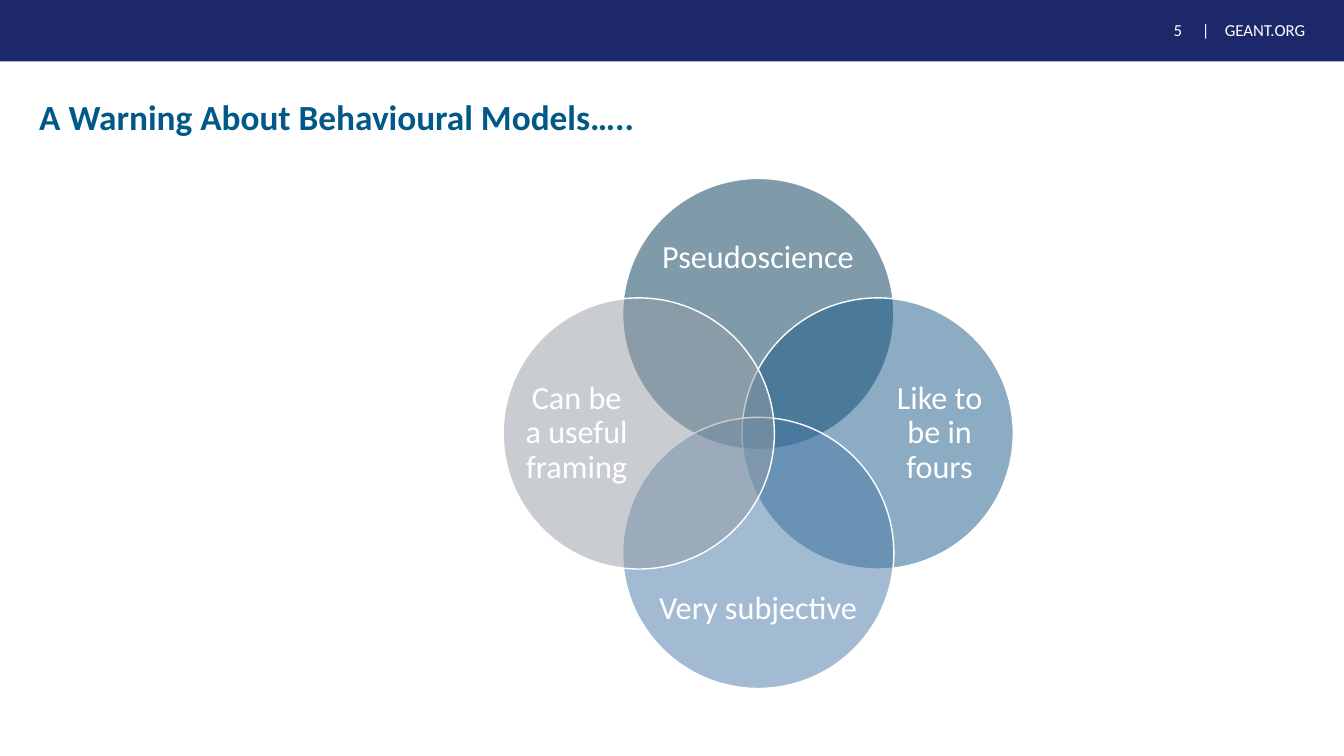
from lxml.etree import SubElement
from pptx import Presentation
from pptx.dml.color import RGBColor
from pptx.enum.shapes import MSO_SHAPE
from pptx.enum.text import MSO_ANCHOR, PP_ALIGN
from pptx.oxml.ns import qn
from pptx.util import Inches, Pt

WHITE = RGBColor(0xFF, 0xFF, 0xFF)
NAVY = RGBColor(0x1D, 0x28, 0x6B)
TITLE_BLUE = RGBColor(0x00, 0x59, 0x88)
PETALS = [
    ("Pseudoscience", RGBColor(0x00, 0x38, 0x55), 0, -1),
    ("Like to be in fours", RGBColor(0x19, 0x5B, 0x89), 1, 0),
    ("Very subjective", RGBColor(0x49, 0x79, 0xA6), 0, 1),
    ("Can be a useful framing", RGBColor(0x95, 0x9D, 0xA6), -1, 0),
]


def add_text(page, box, text, size, color=WHITE, bold=False, align=PP_ALIGN.LEFT,
             spacing=0.9, inset=None, tab=None):
    """Place one paragraph of text, vertically centred in the box."""
    frame = page.shapes.add_textbox(*map(Inches, box)).text_frame
    frame.word_wrap = True
    frame.vertical_anchor = MSO_ANCHOR.MIDDLE
    if inset is not None:
        for side in ("left", "top", "right", "bottom"):
            setattr(frame, f"margin_{side}", Inches(inset))
    para = frame.paragraphs[0]
    para.alignment = align
    para.line_spacing = spacing
    if tab is not None:
        stops = SubElement(para._p.get_or_add_pPr(), qn("a:tabLst"))
        SubElement(stops, qn("a:tab"), pos=str(Inches(tab)), algn="l")
    span = para.add_run()
    span.text = text
    style = {"name": "Calibri", "size": Pt(size), "bold": bold}
    for name, value in style.items():
        setattr(span.font, name, value)
    span.font.color.rgb = color


def add_header(page, box):
    """Draw the top band with the page number and web address."""
    left, top, width, height = box
    band = page.shapes.add_shape(MSO_SHAPE.RECTANGLE, *map(Inches, box))
    band.shadow.inherit = False
    band.fill.solid()
    band.fill.fore_color.rgb = NAVY
    band.line.fill.background()
    right = left + width
    add_text(page, (right - 1.69, top + 0.16, 0.5, 0.36), "5\t|", 12,
             spacing=1.0, inset=0, tab=0.28)
    add_text(page, (right - 1.28, top + 0.19, 1.39, 0.32), "GEANT.ORG", 12)


def add_petal(page, box, color):
    """Draw one half-transparent circle with a white outline."""
    circle = page.shapes.add_shape(MSO_SHAPE.OVAL, *map(Inches, box))
    circle.shadow.inherit = False
    circle.fill.solid()
    circle.fill.fore_color.rgb = color
    tint = circle.fill._xPr.find(qn("a:solidFill"))[0]
    SubElement(tint, qn("a:alpha"), val="50000")
    circle.line.color.rgb = WHITE
    circle.line.width = Pt(1)


def add_venn(page, box):
    """Draw four overlapping circles around the centre of a square box."""
    left, top, width, height = box
    diameter = 2.69
    center_x, center_y = left + width / 2, top + height / 2
    reach = (width - diameter) / 2
    for text, color, step_x, step_y in PETALS:
        x, y = center_x + step_x * reach, center_y + step_y * reach
        add_petal(page, (x - diameter / 2, y - diameter / 2, diameter, diameter), color)
        label_width, label_height = (1.03, 2.07) if step_x else (2.07, 0.85)
        label_x, label_y = center_x + step_x * 1.8, center_y + step_y * 1.74
        add_text(page, (label_x - label_width / 2, label_y - label_height / 2,
                        label_width, label_height),
                 text, 23, align=PP_ALIGN.CENTER, inset=0)


def main():
    """Build the slide and save the deck."""
    deck = Presentation()
    deck.slide_width, deck.slide_height = Inches(13.33), Inches(7.5)
    page = deck.slides.add_slide(deck.slide_layouts[6])
    add_header(page, (0, -0.04, 13.33, 0.65))
    add_text(page, (0.29, 0.95, 10.82, 0.47), "A Warning About Behavioural Models…..",
             25.2, TITLE_BLUE, bold=True)
    add_venn(page, (4.99, 1.77, 5.06, 5.06))
    deck.save("out.pptx")


if __name__ == "__main__":
    main()
